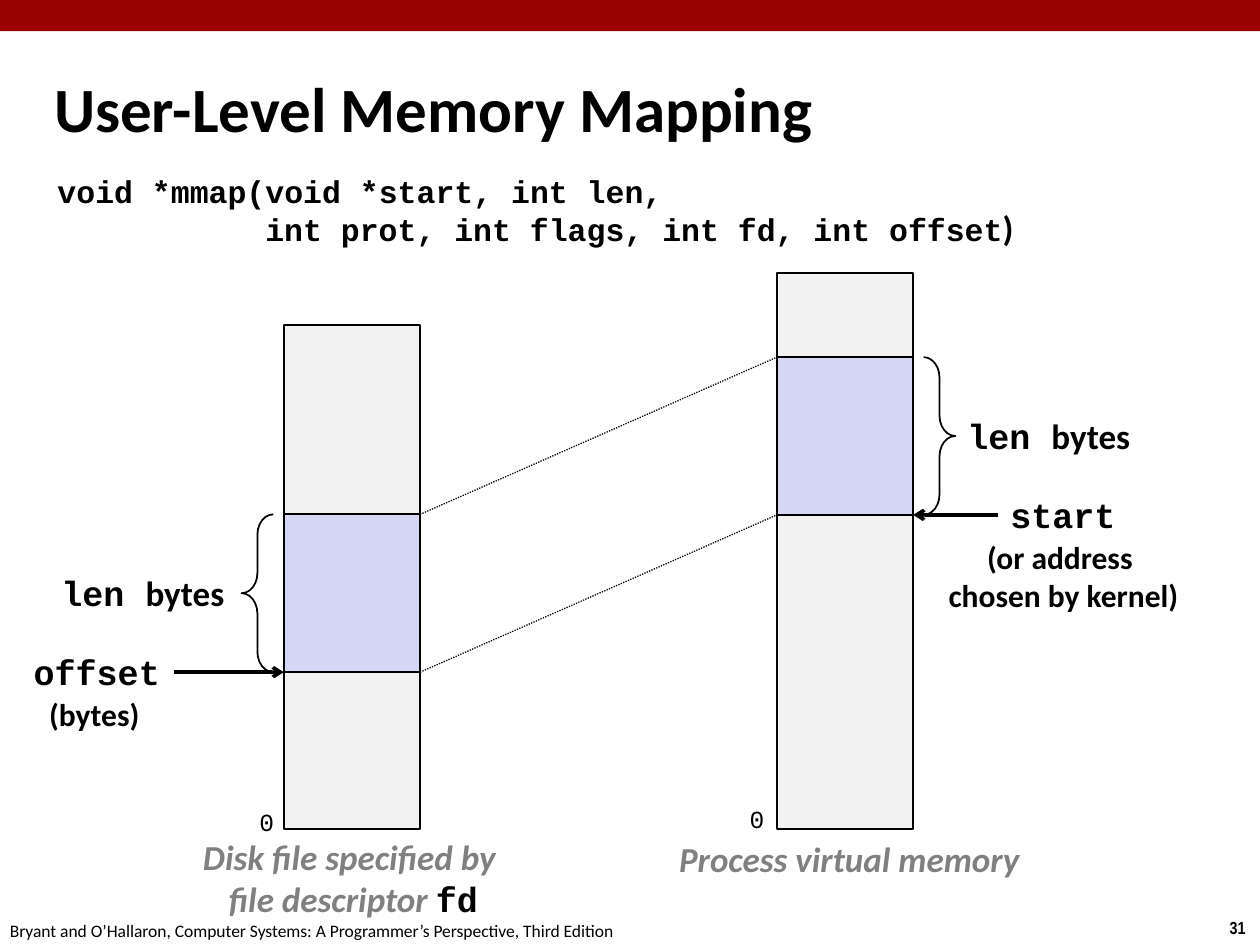
from lxml import etree
from pptx import Presentation
from pptx import util as u
from pptx.dml.color import RGBColor
from pptx.enum import dml, shapes, text
from pptx.oxml import ns


def color(value):
    return RGBColor.from_string(value)


class Sketch:
    black = "000000"
    gray = "808080"
    bar_fill = "F2F2F2"
    mapped_fill = "D6D6F5"
    banner_fill = "990000"
    sans = "Calibri"
    mono = "Courier New"

    def __init__(self, slide):
        self.slide = slide

    def style(self, font, name=None, size=None, ink=None, bold=None, italic=None):
        if name:
            font.name = name
        if size:
            font.size = u.Pt(size)
        if ink:
            font.color.rgb = color(ink)
        if bold is not None:
            font.bold = bold
        if italic is not None:
            font.italic = italic

    def shape(self, kind, left, top, width, height, fill=None, line=None):
        shape = self.slide.shapes.add_shape(
            kind, u.Cm(left), u.Cm(top), u.Cm(width), u.Cm(height))
        shape.shadow.inherit = False
        if fill:
            shape.fill.solid()
            shape.fill.fore_color.rgb = color(fill)
        else:
            shape.fill.background()
        if line:
            shape.line.color.rgb = color(line)
            shape.line.width = u.Pt(1)
        else:
            shape.line.fill.background()
        return shape

    def bar(self, left, top, width, height, fill):
        return self.shape(shapes.MSO_SHAPE.RECTANGLE, left, top, width, height,
                          fill, self.black)

    def brace(self, kind, left, top, height):
        brace = self.shape(kind, left, top, 0.64, height, line=self.black)
        brace.adjustments[0] = 0.64

    def line(self, start, end, width, dash=None, arrow=False):
        connector = self.slide.shapes.add_connector(
            shapes.MSO_CONNECTOR.STRAIGHT, *map(u.Cm, (*start, *end)))
        connector.line.color.rgb = color(self.black)
        connector.line.width = u.Pt(width)
        if dash:
            connector.line.dash_style = dash
        if arrow:
            etree.SubElement(connector.line._get_or_add_ln(),
                             ns.qn("a:tailEnd"), type="arrow")
        etree.SubElement(connector._element.spPr, ns.qn("a:effectLst"))

    def label(self, left, top, width, height, *lines, name=sans, size=20,
              ink=black, bold=True, italic=False, centered=False, wrap=False):
        box = self.slide.shapes.add_textbox(
            u.Cm(left), u.Cm(top), u.Cm(width), u.Cm(height))
        frame = box.text_frame
        frame.word_wrap = wrap
        if not wrap:
            frame.auto_size = text.MSO_AUTO_SIZE.SHAPE_TO_FIT_TEXT
        for index, runs in enumerate(lines):
            paragraph = frame.add_paragraph() if index else frame.paragraphs[0]
            if centered:
                paragraph.alignment = text.PP_ALIGN.CENTER
            mixed = not isinstance(runs, str)
            self.style(paragraph.font, None if mixed else name, size,
                       ink, bold, italic)
            for content, changes in runs if mixed else [(runs, {})]:
                run = paragraph.add_run()
                run.text = content
                if mixed:
                    self.style(run.font, **{"name": name, **changes})
        return frame


def main():
    presentation = Presentation()
    presentation.slide_width = u.Cm(25.4)
    presentation.slide_height = u.Cm(19.05)
    sketch = Sketch(presentation.slides.add_slide(presentation.slide_layouts[6]))
    mono, sans = sketch.mono, sketch.sans

    sketch.shape(shapes.MSO_SHAPE.RECTANGLE, 0, 0, 25.4, 0.63, sketch.banner_fill)
    sketch.label(24.54, 18.36, 0.86, 0.69, "31", name="Arial Narrow", size=10)
    sketch.label(-0.05, 18.42, 12.9, 0.69,
                 "Bryant and O’Hallaron, Computer Systems: "
                 "A Programmer’s Perspective, Third Edition", size=10, bold=False)
    title = sketch.label(0.84, 1.37, 20.17, 1.6, "User-Level Memory Mapping",
                         size=36, wrap=True)
    title.vertical_anchor = text.MSO_ANCHOR.MIDDLE

    signature = sketch.label(
        0.91, 3.4, 23.09, 2.31, "void *mmap(void *start, int len,",
        [("int prot, int flags, int fd, int offset", {}),
         (")", {"name": sans, "size": 20})],
        name=mono, size=18, wrap=True)
    for paragraph in signature.paragraphs:
        paragraph.line_spacing = 0.94
    signature.paragraphs[1]._p.get_or_add_pPr().set("marL", str(u.Cm(4.19)))

    bar_width, bottom, mapped_height = 2.75, 16.72, 3.18
    file_left, file_top, file_mapped = 5.72, 6.56, 10.37
    memory_left, memory_top, memory_mapped = 15.66, 5.5, 7.2
    for left, top, mapped in ((file_left, file_top, file_mapped),
                              (memory_left, memory_top, memory_mapped)):
        sketch.bar(left, top, bar_width, bottom - top, sketch.bar_fill)
        sketch.bar(left, mapped, bar_width, mapped_height, sketch.mapped_fill)
    for offset in (0, mapped_height):
        sketch.line((file_left + bar_width, file_mapped + offset),
                    (memory_left, memory_mapped + offset), 0.75,
                    dash=dml.MSO_LINE.ROUND_DOT)

    sketch.brace(shapes.MSO_SHAPE.RIGHT_BRACE, 18.62, memory_mapped, mapped_height)
    sketch.brace(shapes.MSO_SHAPE.LEFT_BRACE, 4.87, file_mapped, mapped_height)
    start_level = memory_mapped + mapped_height
    offset_level = file_mapped + mapped_height
    sketch.line((20.12, start_level), (memory_left + bar_width, start_level), 2,
                arrow=True)
    sketch.line((3.51, offset_level), (file_left, offset_level), 2, arrow=True)

    for left, top in ((19.25, 8.23), (0.99, 11.4)):
        sketch.label(left, top, 3.84, 1.12,
                     [("len ", {"name": mono}), ("bytes", {})])
    sketch.label(20.12, 9.83, 2.64, 1.12, "start", name=mono)
    sketch.label(0.43, 12.98, 3.07, 1.12, "offset", name=mono)
    sketch.label(18.85, 10.72, 5.18, 1.8, "(or address ", "chosen by kernel)",
                 size=18, centered=True)
    sketch.label(0.74, 13.89, 2.34, 1.02, "(bytes)", size=18)
    for left, top in ((4.98, 16.15), (14.86, 16.08)):
        sketch.label(left, top, 0.81, 0.86, "0", name=mono, size=14, bold=False)

    sketch.label(13.44, 16.76, 7.42, 1.12, "Process virtual memory",
                 ink=sketch.gray, italic=True)
    sketch.label(3.81, 16.71, 6.63, 1.96, "Disk file specified by ",
                 [("file descriptor ", {}),
                  ("fd", {"name": mono, "ink": sketch.black, "italic": False})],
                 ink=sketch.gray, italic=True, centered=True)

    presentation.save("out.pptx")


if __name__ == "__main__":
    main()
